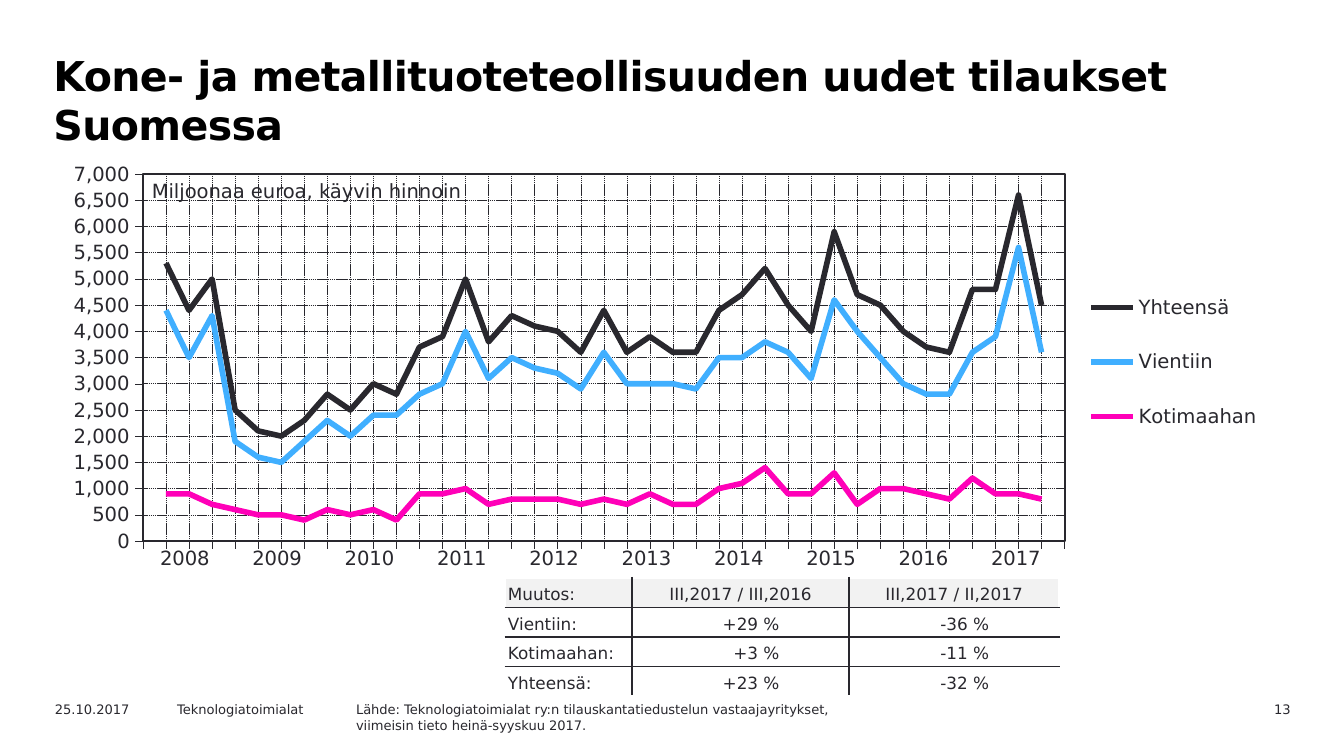
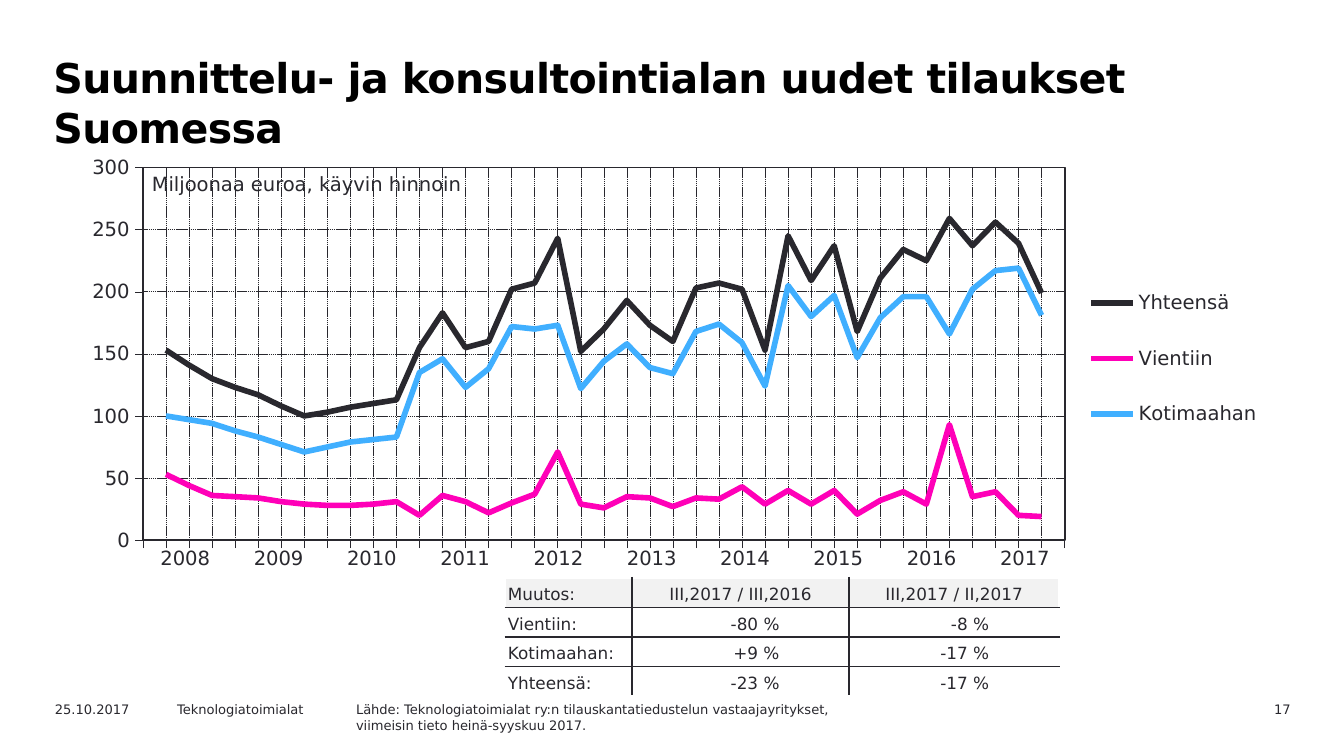
from dataclasses import dataclass

from lxml import etree
from pptx import Presentation
from pptx import util as u
from pptx.chart.data import CategoryChartData
from pptx.dml.color import RGBColor
from pptx.enum import chart as charts, dml, text
from pptx.oxml import parse_xml
from pptx.oxml.ns import nsdecls, qn

Cm, Pt = u.Cm, u.Pt

INK = RGBColor(0x29, 0x28, 0x2E)
BLACK = RGBColor(0x00, 0x00, 0x00)
WHITE = RGBColor(0xFF, 0xFF, 0xFF)
HEADER_GREY = RGBColor(0xF2, 0xF2, 0xF2)
SKY = RGBColor(0x40, 0xAF, 0xFF)
MAGENTA = RGBColor(0xFF, 0x00, 0xB8)
FONT = "DejaVu Sans"
LEFT, CENTER, RIGHT = text.PP_ALIGN.LEFT, text.PP_ALIGN.CENTER, text.PP_ALIGN.RIGHT
NO_TABLE_STYLE = "{2D5ABB26-0587-4C30-8999-92F81FD0307C}"
LEGEND_LAYOUT = (0.84, 0.245, 0.155, 0.445)
PLOT_LAYOUT = (0.082, 0.041, 0.747, 0.833)

ORGANISATION = "Teknologiatoimialat"
SOURCE = (f"Lähde: {ORGANISATION} ry:n tilauskantatiedustelun vastaajayritykset,\n"
          "viimeisin tieto heinä-syyskuu 2017.")
UNIT = "Miljoonaa euroa, käyvin hinnoin"
YEARS = [str(year) for year in range(2008, 2018)]
CHANGE_HEADER = ("Muutos:", "III,2017 / III,2016", "III,2017 / II,2017")


@dataclass
class OrdersPage:
    title: str
    number: int
    line_spacing: int
    chart_top: float
    years_width: float
    axis_max: int
    axis_step: int
    series: list
    changes: list


MACHINERY = OrdersPage(
    "Kone- ja metallituoteteollisuuden uudet tilaukset Suomessa", 13, 26, 2.95, 17.45,
    7000, 500,
    [("Yhteensä", INK, [
        5300, 4400, 5000, 2500, 2100, 2000, 2300, 2800, 2500, 3000, 2800, 3700, 3900,
        5000, 3800, 4300, 4100, 4000, 3600, 4400, 3600, 3900, 3600, 3600, 4400, 4700,
        5200, 4500, 4000, 5900, 4700, 4500, 4000, 3700, 3600, 4800, 4800, 6600, 4500]),
     ("Vientiin", SKY, [
         4400, 3500, 4300, 1900, 1600, 1500, 1900, 2300, 2000, 2400, 2400, 2800, 3000,
         4000, 3100, 3500, 3300, 3200, 2900, 3600, 3000, 3000, 3000, 2900, 3500, 3500,
         3800, 3600, 3100, 4600, 4000, 3500, 3000, 2800, 2800, 3600, 3900, 5600, 3600]),
     ("Kotimaahan", MAGENTA, [
         900, 900, 700, 600, 500, 500, 400, 600, 500, 600, 400, 900, 900,
         1000, 700, 800, 800, 800, 700, 800, 700, 900, 700, 700, 1000, 1100,
         1400, 900, 900, 1300, 700, 1000, 1000, 900, 800, 1200, 900, 900, 800])],
    [("Vientiin:", "+29 %", "-36 %"),
     ("Kotimaahan:", "+3 %", "-11 %"),
     ("Yhteensä:", "+23 %", "-32 %")])

CONSULTING = OrdersPage(
    "Suunnittelu- ja konsultointialan uudet tilaukset Suomessa", 17, 27, 2.82, 17.63,
    300, 50,
    [("Yhteensä", INK, [
        153, 141, 130, 123, 117, 108, 100, 103, 107, 110, 113, 155, 183,
        155, 160, 202, 207, 243, 152, 170, 193, 173, 160, 203, 207, 202,
        153, 245, 209, 237, 168, 211, 234, 225, 259, 237, 256, 239, 199]),
     ("Vientiin", MAGENTA, [
         53, 44, 36, 35, 34, 31, 29, 28, 28, 29, 31, 20, 36,
         31, 22, 30, 37, 71, 29, 26, 35, 34, 27, 34, 33, 43,
         29, 40, 29, 40, 21, 32, 39, 29, 93, 35, 39, 20, 19]),
     ("Kotimaahan", SKY, [
         100, 97, 94, 88, 83, 77, 71, 75, 79, 81, 83, 135, 146,
         123, 138, 172, 170, 173, 122, 144, 158, 139, 134, 168, 174, 159,
         124, 205, 180, 197, 147, 179, 196, 196, 166, 202, 217, 219, 181])],
    [("Vientiin:", "-80 %", "-8 %"),
     ("Kotimaahan:", "+9 %", "-17 %"),
     ("Yhteensä:", "-23 %", "-17 %")])


def style_font(font, size, color=INK, bold=False):
    font.name, font.size, font.bold = FONT, Pt(size), bold
    font.color.rgb = color


def write(frame, content, size, align=LEFT, color=INK, bold=False):
    """Fill a text frame or cell frame, one paragraph per line."""
    frame.text = content
    for paragraph in frame.paragraphs:
        paragraph.alignment = align
        for run in paragraph.runs:
            style_font(run.font, size, color, bold)


def set_margins(target, left, top, right, bottom):
    target.margin_left, target.margin_top = Cm(left), Cm(top)
    target.margin_right, target.margin_bottom = Cm(right), Cm(bottom)


def add_text(slide, box, content, size, align=LEFT, color=INK, bold=False, wrap=True):
    frame = slide.shapes.add_textbox(*map(Cm, box)).text_frame
    frame.word_wrap = wrap
    set_margins(frame, 0.25, 0.13, 0.25, 0.13)
    write(frame, content, size, align, color, bold)
    return frame


def add_title(slide, box, title, line_spacing):
    frame = add_text(slide, box, title, 22, color=BLACK, bold=True)
    set_margins(frame, 0.3, 0.18, 0.25, 0)
    paragraph = frame.paragraphs[0]
    paragraph.line_spacing = Pt(line_spacing)
    paragraph.runs[0]._r.get_or_add_rPr().set("spc", "-30")


def add_footer(slide, box, number):
    left, top, width, height = box
    parts = [(0, 2.54, "25.10.2017", LEFT),
             (2.31, 3.61, ORGANISATION, LEFT),
             (5.69, 12.88, SOURCE, LEFT),
             (width - 2.39, 2.39, str(number), RIGHT)]
    for offset, part_width, content, align in parts:
        add_text(slide, (left + offset, top, part_width, height), content, 7, align)


def make_layout(fractions, inner=False):
    target = '<c:layoutTarget val="inner"/>' if inner else ""
    modes = "".join(f'<c:{axis}Mode val="edge"/>' for axis in "xy")
    sizes = "".join(f'<c:{name} val="{value}"/>' for name, value in zip("xywh", fractions))
    return parse_xml(f'<c:layout {nsdecls("c")}><c:manualLayout>{target}{modes}{sizes}'
                     '</c:manualLayout></c:layout>')


def place(element, layout, index):
    """Give a chart part its manual layout at the index the schema asks for."""
    for old in element.findall(qn("c:layout")):
        element.remove(old)
    element.insert(index, layout)


def style_axis(axis):
    axis.format.line.color.rgb = INK
    axis.format.line.width = Pt(0.22)
    axis.major_tick_mark = charts.XL_TICK_MARK.OUTSIDE
    axis.minor_tick_mark = charts.XL_TICK_MARK.NONE
    axis.has_major_gridlines = True
    grid = axis.major_gridlines.format.line
    grid.color.rgb, grid.width = INK, Pt(0.25)
    grid.dash_style = dml.MSO_LINE.SQUARE_DOT


def add_orders_chart(slide, box, page):
    data = CategoryChartData(number_format="#,##0")
    # An empty point at each end keeps the lines off the frame.
    data.categories = [str(i + 1) for i in range(len(page.series[0][2]) + 2)]
    for name, _, values in page.series:
        data.add_series(name, [None, *values, None])
    chart = slide.shapes.add_chart(charts.XL_CHART_TYPE.LINE, *map(Cm, box), data).chart
    chart.has_title = False
    style_font(chart.font, 10.5)

    plot = chart.plots[0]
    plot.vary_by_categories = False
    for series, (_, color, _) in zip(plot.series, page.series):
        series.smooth = False
        series.marker.style = charts.XL_MARKER_STYLE.NONE
        series.format.line.color.rgb = color
        series.format.line.width = Pt(3)

    style_axis(chart.category_axis)
    chart.category_axis.tick_label_position = charts.XL_TICK_LABEL_POSITION.NONE
    value_axis = chart.value_axis
    style_axis(value_axis)
    value_axis.minimum_scale, value_axis.maximum_scale = 0, page.axis_max
    value_axis.major_unit = page.axis_step
    value_axis.tick_labels.number_format = "#,##0"
    value_axis.tick_labels.number_format_is_linked = False
    style_font(value_axis.tick_labels.font, 10.5)

    chart.has_legend = True
    chart.legend.position = charts.XL_LEGEND_POSITION.RIGHT
    chart.legend.include_in_layout = False
    style_font(chart.legend.font, 10.5)
    place(chart.legend._element, make_layout(LEGEND_LAYOUT), 1)

    plot_area = chart._chartSpace.find(".//" + qn("c:plotArea"))
    place(plot_area, make_layout(PLOT_LAYOUT, inner=True), 0)
    plot_area.find(".//" + qn("c:majorUnit")).addprevious(
        parse_xml(f'<c:crossBetween {nsdecls("c")} val="midCat"/>'))
    plot_area.append(parse_xml(
        f'<c:spPr {nsdecls("c", "a")}><a:noFill/><a:ln w="12700"><a:solidFill>'
        f'<a:srgbClr val="{INK}"/></a:solidFill></a:ln></c:spPr>'))


def add_plain_table(slide, box, row_count, column_widths):
    table = slide.shapes.add_table(row_count, len(column_widths), *map(Cm, box)).table
    table.first_row = table.horz_banding = False
    table._tbl.tblPr.find(qn("a:tableStyleId")).text = NO_TABLE_STYLE
    for column, column_width in zip(table.columns, column_widths):
        column.width = Cm(column_width)
    for row in table.rows:
        row.height = Cm(box[3] / row_count)
    return table


def add_year_labels(slide, box):
    table = add_plain_table(slide, box, 1, [box[2] / len(YEARS)] * len(YEARS))
    for cell, year in zip(table.iter_cells(), YEARS):
        cell.fill.background()
        set_margins(cell, 0.25, 0.13, 0.25, 0.13)
        write(cell.text_frame, year, 10.5, CENTER)


def set_borders(cell, colors):
    """Draw the left, right, top and bottom border of a cell."""
    properties = cell._tc.get_or_add_tcPr()
    for index, (side, color) in enumerate(zip("LRTB", colors)):
        line = etree.Element(qn(f"a:ln{side}"), w=str(int(Pt(1))))
        fill = etree.SubElement(line, qn("a:solidFill"))
        etree.SubElement(fill, qn("a:srgbClr"), val=str(color))
        properties.insert(index, line)


def add_change_table(slide, box, changes):
    rows = [CHANGE_HEADER, *changes]
    widths = (2.39, 4.11, box[2] - 6.5)
    table = add_plain_table(slide, box, len(rows), widths)
    last_row, last_column = len(rows) - 1, len(widths) - 1
    for i, row in enumerate(rows):
        for j, content in enumerate(row):
            cell = table.cell(i, j)
            is_value = i > 0 and j > 0
            cell.fill.solid()
            cell.fill.fore_color.rgb = WHITE if i else HEADER_GREY
            cell.vertical_anchor = text.MSO_ANCHOR.BOTTOM
            set_margins(cell, 0.05, 0.05, 1.32 if is_value else 0.05, 0.05)
            align = RIGHT if is_value else CENTER if j else LEFT
            write(cell.text_frame, content, 9, align)
            outer = (j == 0, j == last_column, i == 0, i == last_row)
            set_borders(cell, [WHITE if edge else INK for edge in outer])


def add_orders_slide(presentation, page):
    slide = presentation.slides.add_slide(presentation.slide_layouts[6])
    add_title(slide, (0.71, 0.79, 22.2, 1.8), page.title, page.line_spacing)
    add_footer(slide, (0.79, 13.13, 23.85, 0.46), page.number)
    add_orders_chart(slide, (0.79, page.chart_top, 23.32, 11.28 - page.chart_top), page)
    add_year_labels(slide, (2.62, 10.21, page.years_width, 0.79))
    add_text(slide, (2.62, page.chart_top + 0.3, 6.6, 0.69), UNIT, 10.5, wrap=False)
    add_change_table(slide, (9.55, 10.92, 10.46, 2.24), page.changes)


def main():
    presentation = Presentation()
    presentation.slide_width, presentation.slide_height = Cm(25.4), Cm(14.29)
    for page in (MACHINERY, CONSULTING):
        add_orders_slide(presentation, page)
    presentation.save("out.pptx")


if __name__ == "__main__":
    main()
